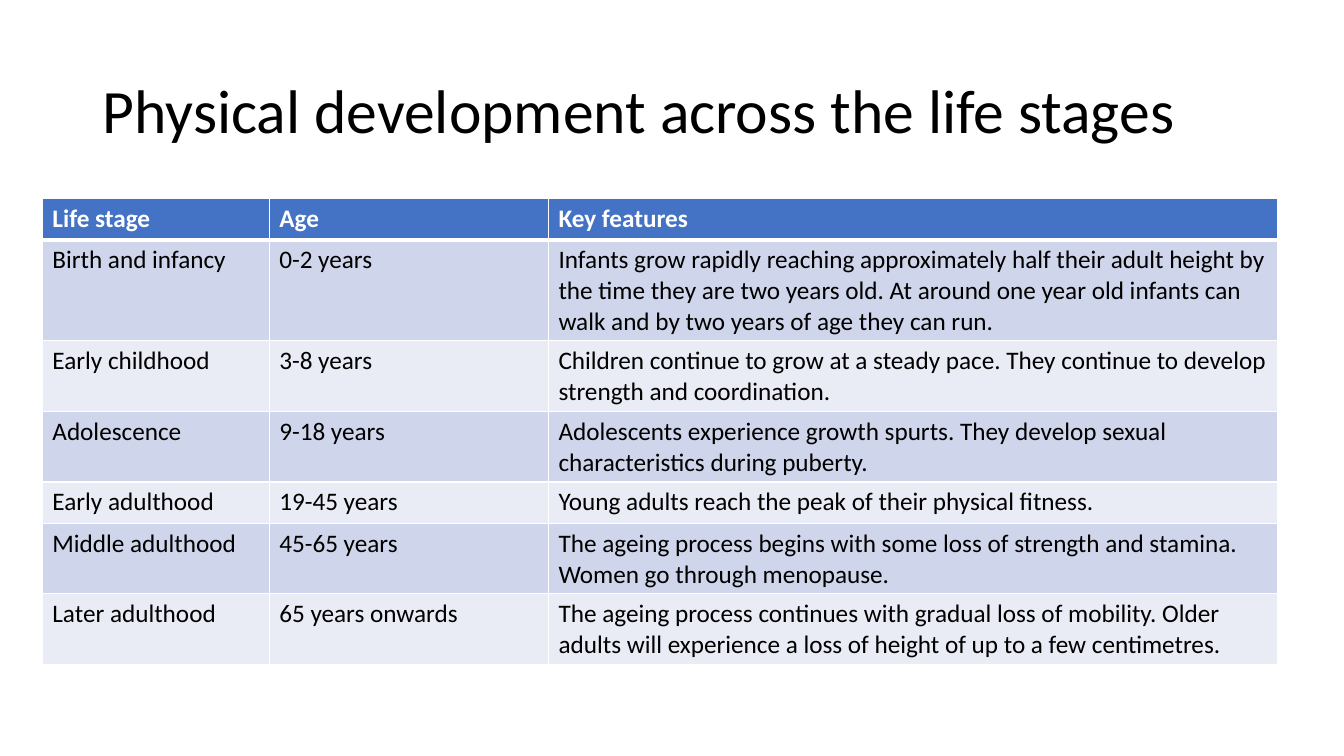
from pptx import Presentation
from pptx.dml.color import RGBColor
from pptx.enum.text import MSO_ANCHOR as Anchor
from pptx.oxml.ns import qn
from pptx.util import Inches, Pt
from lxml.etree import SubElement

FONT = "Calibri"
COLOURS = {
    "text": "000000",
    "header_text": "FFFFFF",
    "header": "4472C4",
    "odd_row": "CFD5EA",
    "even_row": "E9EBF5",
    "border": "FFFFFF",
}
TITLE = "Physical development across the life stages"
HEADINGS = ("Life stage", "Age", "Key features")
LIFE_STAGES = [
    ("Birth and infancy", "0-2 years",
     "Infants grow rapidly reaching approximately half their adult height by "
     "the time they are two years old. At around one year old infants can "
     "walk and by two years of age they can run."),
    ("Early childhood", "3-8 years",
     "Children continue to grow at a steady pace. They continue to develop "
     "strength and coordination."),
    ("Adolescence", "9-18 years",
     "Adolescents experience growth spurts. They develop sexual "
     "characteristics during puberty."),
    ("Early adulthood", "19-45 years",
     "Young adults reach the peak of their physical fitness."),
    ("Middle adulthood", "45-65 years",
     "The ageing process begins with some loss of strength and stamina. "
     "Women go through menopause."),
    ("Later adulthood", "65 years onwards",
     "The ageing process continues with gradual loss of mobility. Older "
     "adults will experience a loss of height of up to a few centimetres."),
]
COLUMN_SHARES = (2.25, 2.77, 7.23)
ROW_HEIGHT = 0.41


def add_span(para, text, size, colour, bold=False):
    span = para.add_run()
    span.text = text
    span.font.name = FONT
    span.font.size = Pt(size)
    span.font.bold = bold
    span.font.color.rgb = RGBColor.from_string(COLOURS[colour])


def add_borders(cell, bottom):
    properties = cell._tc.get_or_add_tcPr()
    for side, width in (("L", 1), ("R", 1), ("T", 1), ("B", bottom)):
        line = SubElement(properties, qn(f"a:ln{side}"), w=str(Pt(width)))
        fill = SubElement(line, qn("a:solidFill"))
        SubElement(fill, qn("a:srgbClr"), val=COLOURS["border"])


def add_title(page, left, top, width, height):
    box = page.shapes.add_textbox(
        Inches(left), Inches(top), Inches(width), Inches(height))
    frame = box.text_frame
    frame.word_wrap = True
    frame.vertical_anchor = Anchor.MIDDLE
    para = frame.paragraphs[0]
    para.line_spacing = 0.9
    add_span(para, TITLE, 44, "text")


def add_stage_table(page, left, top, width):
    rows = [HEADINGS, *LIFE_STAGES]
    table = page.shapes.add_table(
        len(rows), len(HEADINGS), Inches(left), Inches(top),
        Inches(width), Inches(ROW_HEIGHT * len(rows))).table
    for column, share in zip(table.columns, COLUMN_SHARES):
        column.width = Inches(width * share / sum(COLUMN_SHARES))
    for row_index, texts in enumerate(rows):
        header = row_index == 0
        band = "odd_row" if row_index % 2 else "even_row"
        for column_index, text in enumerate(texts):
            cell = table.cell(row_index, column_index)
            add_borders(cell, 3 if header else 1)
            cell.fill.solid()
            cell.fill.fore_color.rgb = RGBColor.from_string(
                COLOURS["header" if header else band])
            add_span(cell.text_frame.paragraphs[0], text, 18,
                     "header_text" if header else "text", header)


def main():
    deck = Presentation()
    deck.slide_width = Inches(13.33)
    deck.slide_height = Inches(7.5)
    page = deck.slides.add_slide(deck.slide_layouts[6])
    add_title(page, 0.92, 0.4, 11.5, 1.45)
    add_stage_table(page, 0.42, 1.97, 12.25)
    deck.save("out.pptx")


if __name__ == "__main__":
    main()
